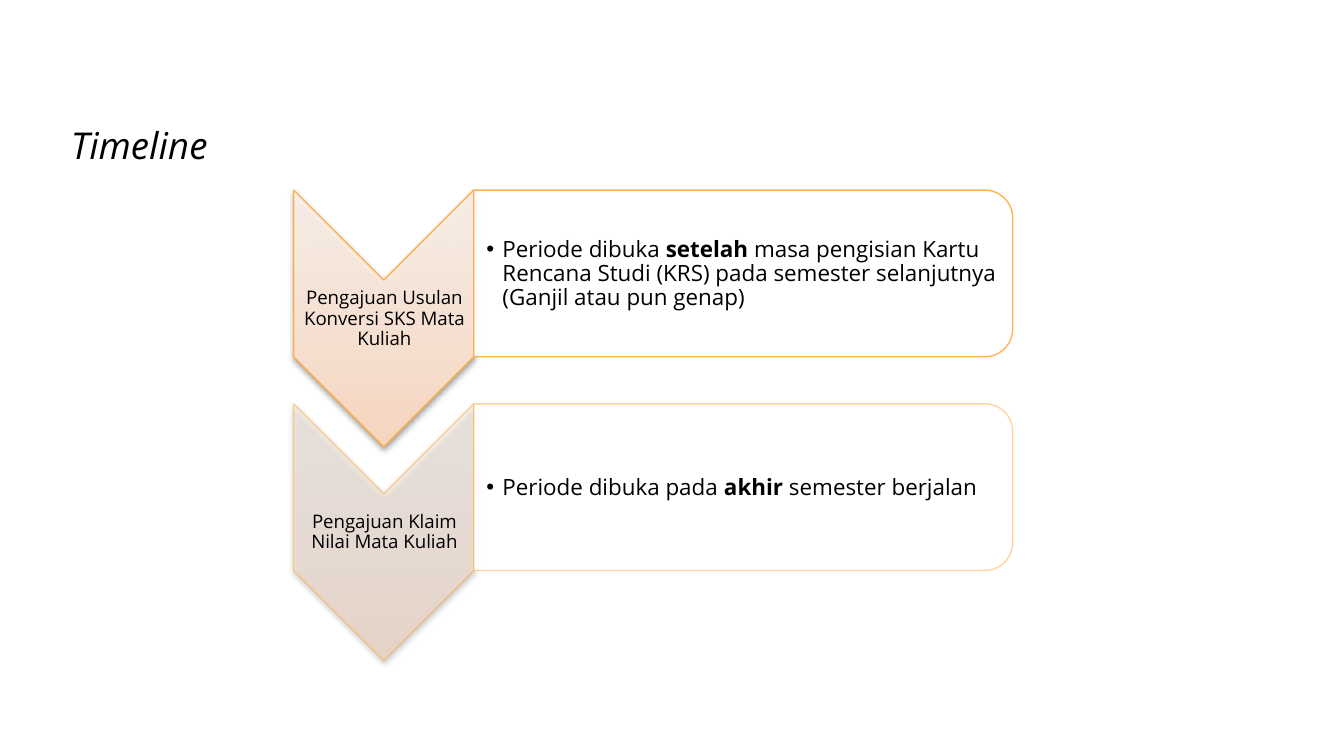
from dataclasses import dataclass

from lxml.etree import SubElement
from pptx import Presentation
from pptx.dml.color import RGBColor as RGB
from pptx.enum.shapes import MSO_SHAPE as Shape
from pptx.enum.text import MSO_ANCHOR as Anchor, PP_ALIGN as Align
from pptx.oxml import parse_xml
from pptx.oxml.ns import nsdecls, qn
from pptx.util import Inches, Pt


@dataclass(frozen=True)
class Theme:
    """Colours, fonts and type sizes of the slide."""
    font: str = "Open Sans"
    bullet_font: str = "Arial"
    ink: str = "000000"
    accent: str = "FFAB40"
    panel: str = "FFFFFF"
    gradient: tuple = ((0, "FFDAC0"), (35, "FFE5D3"), (100, "FFF5EE"))
    title: float = 19.8
    step: float = 10
    detail: float = 12
    line: float = 0.75


THEME = Theme()
ROW_STEP = 1.59
ROWS = [
    ("Pengajuan Usulan Konversi SKS Mata Kuliah",
     [("Periode dibuka ", False), ("setelah", True),
      (" masa pengisian Kartu Rencana Studi (KRS) pada semester selanjutnya "
       "(Ganjil atau pun genap)", False)], 90),
    ("Pengajuan Klaim Nilai Mata Kuliah",
     [("Periode dibuka pada", False), (" akhir", True),
      (" semester berjalan", False)], 50),
]


def set_all(obj, values):
    """Set each named attribute of an object."""
    for name, value in values.items():
        setattr(obj, name, value)


def set_alpha(fill_parent, percent):
    """Make the solid colour under an element partly transparent."""
    clr = fill_parent.find(qn("a:solidFill")).find(qn("a:srgbClr"))
    SubElement(clr, qn("a:alpha"), val=str(percent * 1000))


def add_outline(s, kind, box, alpha):
    """Add an outlined preset shape turned a quarter turn."""
    sp = s.shapes.add_shape(kind, *map(Inches, box))
    sp.rotation = 90
    sp.shadow.inherit = False
    sp.line.width = Pt(THEME.line)
    sp.line.color.rgb = RGB.from_string(THEME.accent)
    set_alpha(sp.line._ln, alpha)
    return sp


def add_chevron(s, box, alpha):
    """Add a downward chevron with gradient and soft shadow."""
    sp = add_outline(s, Shape.CHEVRON, box, alpha)
    sp.fill.background()
    stops = "".join(
        f'<a:gs pos="{pos * 1000}"><a:srgbClr val="{color}">'
        f'<a:alpha val="{alpha * 1000}"/></a:srgbClr></a:gs>'
        for pos, color in THEME.gradient)
    gradient = parse_xml(
        f'<a:gradFill {nsdecls("a")} rotWithShape="0"><a:gsLst>{stops}</a:gsLst>'
        '<a:lin ang="16200000" scaled="0"/></a:gradFill>')
    props = sp._element.spPr
    props.replace(props.find(qn("a:noFill")), gradient)
    shadow = SubElement(props.find(qn("a:effectLst")), qn("a:outerShdw"),
                        blurRad=str(Pt(3.15)), dist=str(Pt(1.57)),
                        dir="5400000", rotWithShape="0")
    clr = SubElement(shadow, qn("a:srgbClr"), val=THEME.ink)
    SubElement(clr, qn("a:alpha"), val="38000")


def add_panel(s, box, alpha):
    """Add a white panel rounded on its right side."""
    sp = add_outline(s, Shape.ROUND_2_SAME_RECTANGLE, box, alpha)
    sp.fill.solid()
    sp.fill.fore_color.rgb = RGB.from_string(THEME.panel)
    set_alpha(sp._element.spPr, 90)


def add_text(s, box, runs, size, insets, frame=None, para=None, italic=None):
    """Add a one-paragraph text box and return its paragraph."""
    tf = s.shapes.add_textbox(*map(Inches, box)).text_frame
    sides = ("margin_left", "margin_top", "margin_right", "margin_bottom")
    set_all(tf, dict(zip(sides, map(Inches, insets))))
    set_all(tf, {"word_wrap": True, **(frame or {})})
    p = tf.paragraphs[0]
    set_all(p, para or {})
    for text, bold in runs:
        r = p.add_run()
        r.text = text
        set_all(r.font, {"name": THEME.font, "size": Pt(size),
                         "bold": bold, "italic": italic})
        r.font.color.rgb = RGB.from_string(THEME.ink)
    return p


def add_bullet(p):
    """Give a paragraph a hanging round bullet."""
    props = p._p.get_or_add_pPr()
    indents = {"marL": Inches(0.12), "indent": Inches(-0.12)}
    for name, value in indents.items():
        props.set(name, str(value))
    color = SubElement(props, qn("a:buClr"))
    SubElement(color, qn("a:srgbClr"), val=THEME.ink)
    SubElement(props, qn("a:buFont"), typeface=THEME.bullet_font)
    SubElement(props, qn("a:buChar"), char="•")


def add_row(s, index, label, detail, alpha):
    """Add one timeline step with its description."""
    dy = index * ROW_STEP
    middle = {"vertical_anchor": Anchor.MIDDLE}
    add_chevron(s, (1.9, 1.7 + dy, 1.91, 1.34), alpha)
    add_text(s, (2.19, 2.09 + dy, 1.34, 0.57), [(label, False)], THEME.step,
             [0.01] * 4, middle, {"alignment": Align.CENTER, "line_spacing": 0.9})
    add_panel(s, (4.91, 0.03 + dy, 1.24, 4.01), alpha)
    p = add_text(s, (3.52, 1.48 + dy, 3.95, 1.12), detail, THEME.detail,
                 (0.1, 0.01, 0.01, 0.01), middle, {"line_spacing": 0.9})
    add_bullet(p)


def main():
    """Build and save the timeline slide."""
    prs = Presentation()
    width = Inches(10)
    set_all(prs, {"slide_width": width, "slide_height": width * 9 // 16})
    s = prs.slides.add_slide(prs.slide_layouts[6])
    add_text(s, (0.43, 0.81, 9.14, 0.43), [("Timeline", False)], THEME.title,
             [0.1] * 4, italic=True)
    for index, row in enumerate(ROWS):
        add_row(s, index, *row)
    prs.save("out.pptx")


if __name__ == "__main__":
    main()
